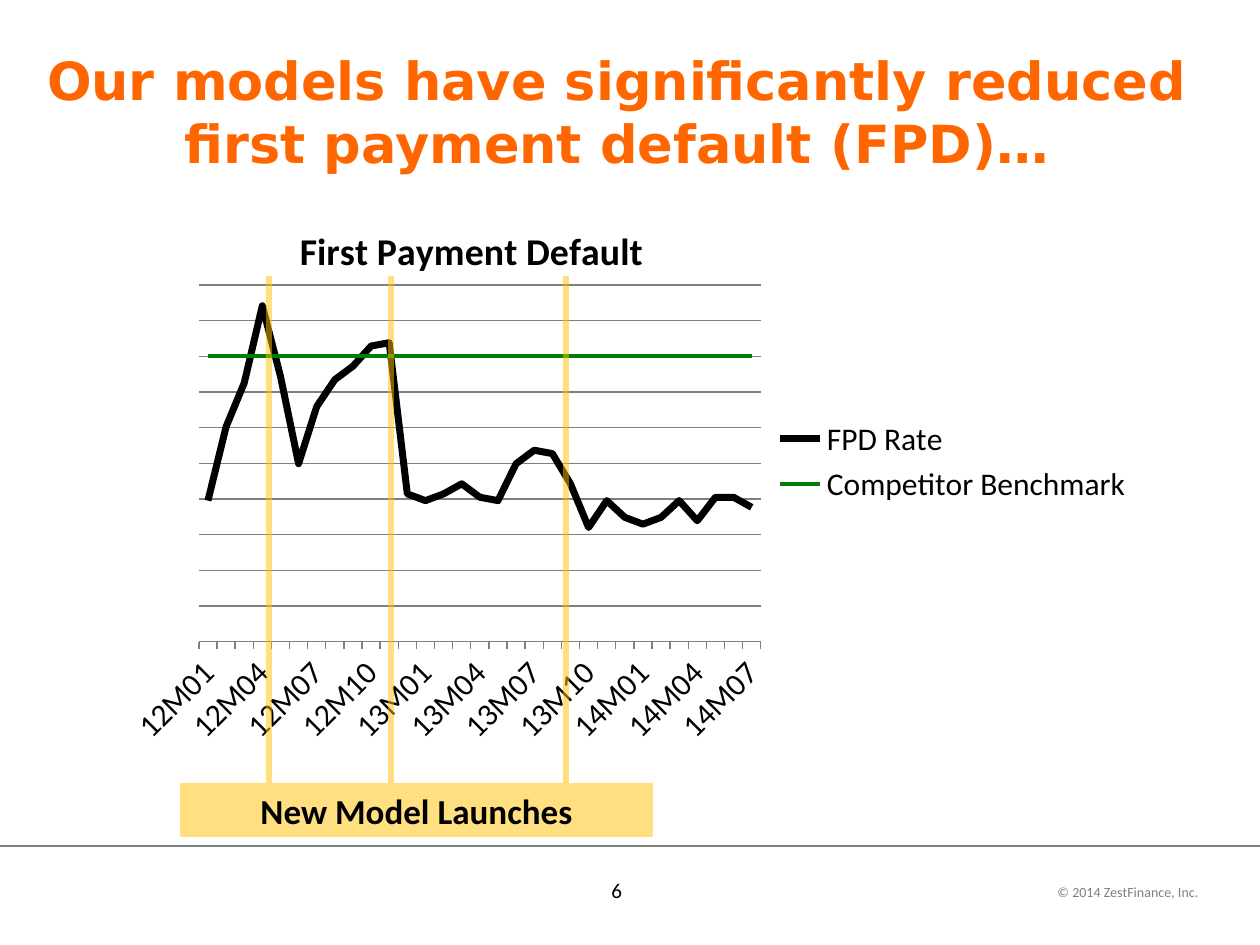
from typing import NamedTuple

from lxml.etree import SubElement
from pptx import Presentation
from pptx.chart.data import CategoryChartData
from pptx.dml.color import RGBColor
from pptx.enum.chart import XL_CHART_TYPE as CT, XL_LEGEND_POSITION as LP
from pptx.enum.chart import XL_MARKER_STYLE as MK, XL_TICK_LABEL_POSITION as TLP
from pptx.enum.chart import XL_TICK_MARK as TM
from pptx.enum.shapes import MSO_CONNECTOR as CONN, MSO_SHAPE as SHAPE
from pptx.enum.text import MSO_ANCHOR as ANCHOR, PP_ALIGN as ALIGN
from pptx.oxml import parse_xml
from pptx.oxml.ns import nsdecls, qn
from pptx.util import Emu, Pt

PX = 914400 / 126
BLACK, GRAY, ORANGE, GREEN, AMBER = "000000", "7F7F7F", "FF6600", "008000", "FFC000"
FPD = [42, 64, 77, 100, 79, 53, 70, 78, 82, 88, 89, 44, 42, 44, 47, 43,
       42, 53, 57, 56, 47, 34, 42, 37, 35, 37, 42, 36, 43, 43, 40]
MONTHS = [f"{12 + i // 12}M{i % 12 + 1:02}" for i in range(len(FPD))]


class Box(NamedTuple):
    x: int
    y: int
    w: int
    h: int


class Series(NamedTuple):
    name: str
    values: list[int]
    color: str
    width: float


CHART = Box(110, 185, 1053, 572)
PLOT = Box(199, 285, 562, 357)
LEGEND = Box(773, 413, 360, 97)
CHART_TITLE = Box(293, 217, 343, 46)
LAUNCH_LABEL = Box(180, 783, 473, 54)
LAUNCHES = [Box(x, 276, 6, 507) for x in (266, 388, 563)]
SERIES = [
    Series("FPD Rate", FPD, BLACK, 4),
    Series("Competitor Benchmark", [85] * len(FPD), GREEN, 2.25),
]


def px(n: float) -> Emu:
    return Emu(round(n * PX))


def rgb(color: str) -> RGBColor:
    return RGBColor.from_string(color)


def style_font(font, size: float, color: str = BLACK, bold: bool = False,
               name: str = "Calibri") -> None:
    font.size, font.bold, font.name = Pt(size), bold, name
    font.color.rgb = rgb(color)


def style_line(line, color: str, width: float) -> None:
    line.color.rgb = rgb(color)
    line.width = Pt(width)


def write(tf, text: str, *, align=ALIGN.LEFT, anchor=ANCHOR.TOP,
          wrap: bool = True, **font) -> None:
    tf.word_wrap, tf.vertical_anchor = wrap, anchor
    p = tf.paragraphs[0]
    p.alignment = align
    r = p.add_run()
    r.text = text
    style_font(r.font, **font)


def add_text(s, box: Box, text: str, **fmt) -> None:
    write(s.shapes.add_textbox(*map(px, box)).text_frame, text, **fmt)


def add_band(s, box: Box):
    sp = s.shapes.add_shape(SHAPE.RECTANGLE, *map(px, box))
    sp.shadow.inherit = False
    sp.line.fill.background()
    sp.fill.solid()
    sp.fill.fore_color.rgb = rgb(AMBER)
    clr = sp.fill._xPr.find(".//" + qn("a:srgbClr"))
    SubElement(clr, qn("a:alpha"), val="50000")
    return sp


def add_rule(s, y: int, width: int) -> None:
    ln = s.shapes.add_connector(CONN.STRAIGHT, 0, px(y), px(width), px(y))
    style_line(ln.line, GRAY, 1)
    SubElement(ln._element.spPr, qn("a:effectLst"))


def place(part, box: Box, index: int, inner: bool = False) -> None:
    for old in part.findall(qn("c:layout")):
        part.remove(old)
    fractions = {"x": (box.x - CHART.x) / CHART.w, "y": (box.y - CHART.y) / CHART.h,
                 "w": box.w / CHART.w, "h": box.h / CHART.h}
    target = '<c:layoutTarget val="inner"/>' if inner else ""
    modes = '<c:xMode val="edge"/><c:yMode val="edge"/>'
    sizes = "".join(f'<c:{k} val="{v:.4f}"/>' for k, v in fractions.items())
    part.insert(index, parse_xml(
        f'<c:layout {nsdecls("c")}><c:manualLayout>{target}{modes}{sizes}'
        "</c:manualLayout></c:layout>"))


def style_axes(chart) -> None:
    cat, val = chart.category_axis, chart.value_axis
    cat.major_tick_mark, cat.minor_tick_mark = TM.OUTSIDE, TM.NONE
    cat.tick_label_position = TLP.LOW
    style_line(cat.format.line, GRAY, 0.75)
    style_font(cat.tick_labels.font, 18)
    cat._element.find(qn("c:txPr")).find(qn("a:bodyPr")).set("rot", "-2700000")
    last = cat._element.find(qn("c:noMultiLvlLbl"))
    for tag, step in (("tickLblSkip", 3), ("tickMarkSkip", 1)):
        last.addprevious(parse_xml(f'<c:{tag} {nsdecls("c")} val="{step}"/>'))
    val.minimum_scale, val.maximum_scale, val.major_unit = 0, 106.2, 10.62
    val.has_major_gridlines = True
    style_line(val.major_gridlines.format.line, GRAY, 0.75)
    val.visible = False


def add_default_chart(s) -> None:
    data = CategoryChartData()
    data.categories = MONTHS
    for item in SERIES:
        data.add_series(item.name, item.values)
    chart = s.shapes.add_chart(CT.LINE, *map(px, CHART), data).chart
    style_font(chart.font, 18)
    chart.has_title = True
    write(chart.chart_title.text_frame, "First Payment Default",
          align=ALIGN.CENTER, size=21.6, bold=True)
    chart.has_legend = True
    chart.legend.position = LP.RIGHT
    chart.legend.include_in_layout = False
    style_font(chart.legend.font, 18)
    plot = chart.plots[0]
    plot.vary_by_categories = False
    for ser, item in zip(plot.series, SERIES):
        ser.smooth = False
        ser.marker.style = MK.NONE
        style_line(ser.format.line, item.color, item.width)
    style_axes(chart)
    place(chart._chartSpace.chart.plotArea, PLOT, 0, inner=True)
    place(chart.chart_title._element, CHART_TITLE, 1)
    place(chart.legend._element, LEGEND, 1)


def main() -> None:
    prs = Presentation()
    prs.slide_width, prs.slide_height = px(1260), px(945)
    s = prs.slides.add_slide(prs.slide_layouts[6])
    add_rule(s, 846, 1260)
    add_text(s, Box(1045, 877, 185, 30), "© 2014 ZestFinance, Inc.", size=8, color=GRAY)
    add_text(s, Box(599, 871, 52, 38), "6", size=12, wrap=False)
    add_text(s, Box(-13, 38, 1260, 147),
             "Our models have significantly reduced first payment default (FPD)…",
             align=ALIGN.CENTER, anchor=ANCHOR.MIDDLE,
             size=30, color=ORANGE, bold=True, name="DejaVu Sans")
    add_default_chart(s)
    for launch in LAUNCHES:
        add_band(s, launch)
    write(add_band(s, LAUNCH_LABEL).text_frame, "New Model Launches",
          align=ALIGN.CENTER, anchor=ANCHOR.MIDDLE, size=20, bold=True)
    prs.save("out.pptx")


if __name__ == "__main__":
    main()
